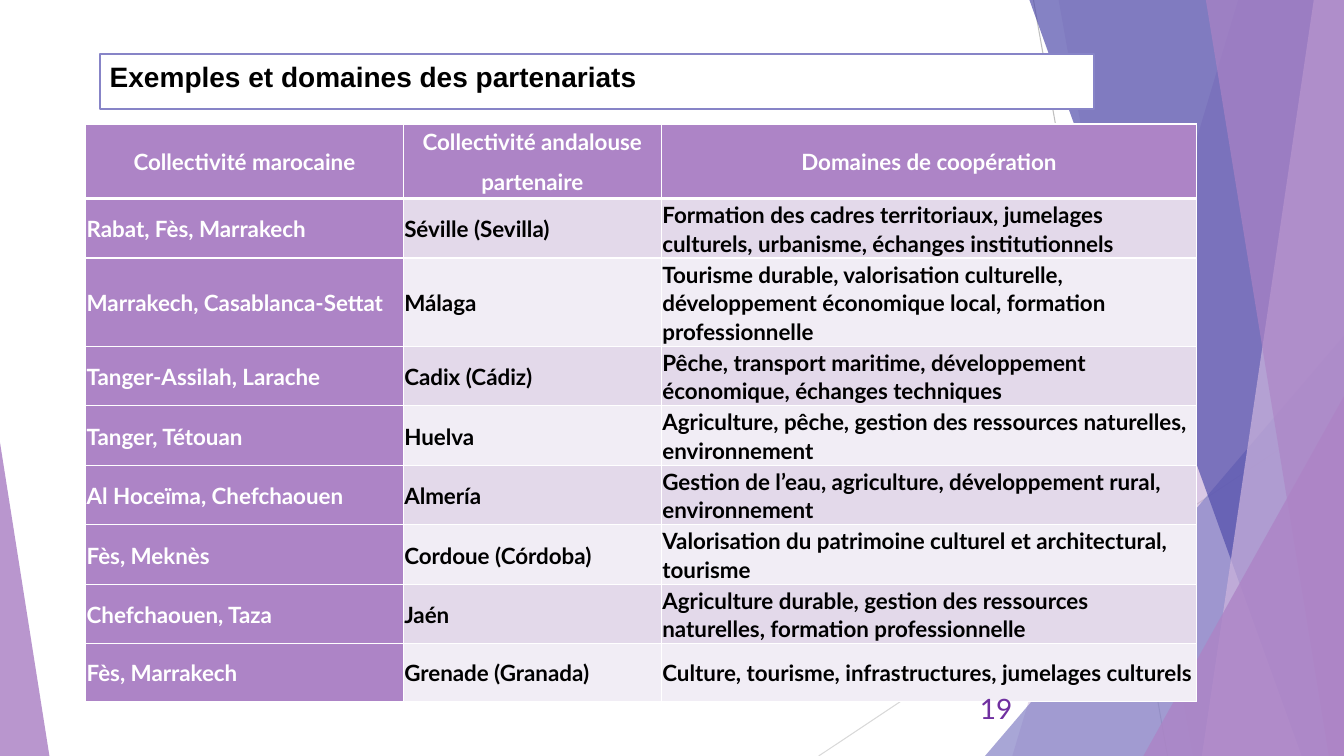
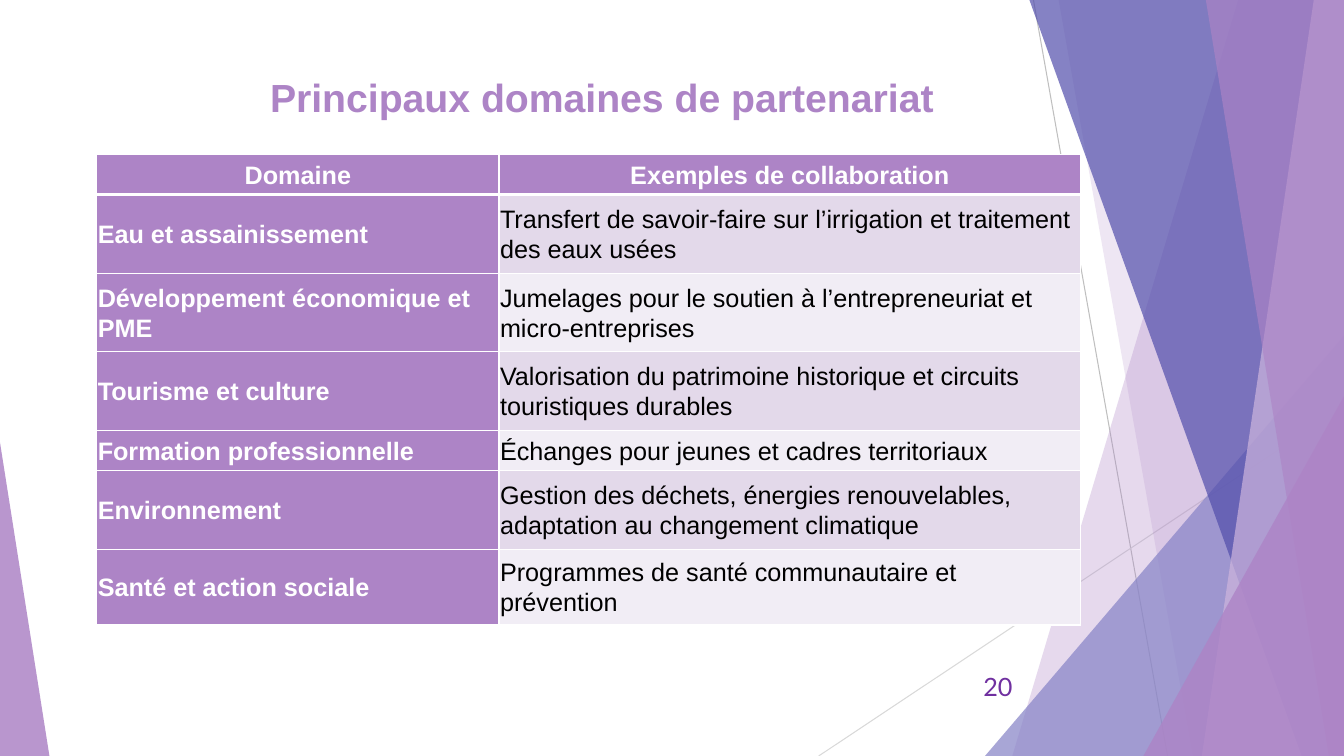
import pptx
import pptx.util
import pptx.dml.color
import pptx.enum.shapes
import pptx.enum.text
import pptx.oxml.ns
import lxml.etree

TOWNS = [
    ("Collectivité marocaine", "Collectivité andalouse\npartenaire", "Domaines de coopération"),
    ("Rabat, Fès, Marrakech", "Séville (Sevilla)",
     "Formation des cadres territoriaux, jumelages culturels, urbanisme, échanges institutionnels"),
    ("Marrakech, Casablanca-Settat", "Málaga",
     "Tourisme durable, valorisation culturelle, développement économique local, formation professionnelle"),
    ("Tanger-Assilah, Larache", "Cadix (Cádiz)",
     "Pêche, transport maritime, développement économique, échanges techniques"),
    ("Tanger, Tétouan", "Huelva",
     "Agriculture, pêche, gestion des ressources naturelles, environnement"),
    ("Al Hoceïma, Chefchaouen", "Almería",
     "Gestion de l’eau, agriculture, développement rural, environnement"),
    ("Fès, Meknès", "Cordoue (Córdoba)",
     "Valorisation du patrimoine culturel et architectural, tourisme"),
    ("Chefchaouen, Taza", "Jaén",
     "Agriculture durable, gestion des ressources naturelles, formation professionnelle"),
    ("Fès, Marrakech", "Grenade (Granada)",
     "Culture, tourisme, infrastructures, jumelages culturels"),
]
FIELDS = [
    ("Domaine", "Exemples de collaboration"),
    ("Eau et assainissement",
     "Transfert de savoir-faire sur l’irrigation et traitement des eaux usées"),
    ("Développement économique et PME",
     "Jumelages pour le soutien à l’entrepreneuriat et micro-entreprises"),
    ("Tourisme et culture",
     "Valorisation du patrimoine historique et circuits touristiques durables"),
    ("Formation professionnelle", "Échanges pour jeunes et cadres territoriaux"),
    ("Environnement",
     "Gestion des déchets, énergies renouvelables, adaptation au changement climatique"),
    ("Santé et action sociale", "Programmes de santé communautaire et prévention"),
]

THEME = {
    "white": "FFFFFF", "black": "000000", "mauve": "AD84C6", "blue": "8784C7",
    "deep": "524EAB", "pale": "CEB5DD", "odd": "E3D9EA", "even": "F1EDF5",
    "page": "7030A0", "grey": "BFBFBF", "light": "D9D9D9",
    "head": "Arial", "body": "Lato",
    "thin": 0.75, "frame": 1.5, "rule": 1, "bar": 3,
}

PAGES = [
    {"title": ("Exemples et domaines des partenariats", (99, 54, 986, 54), 20, "black"),
     "framed": True, "rows": TOWNS, "at": (85, 123), "wide": (315, 256, 531),
     "high": (74, 57, 86, 57, 57, 57, 57, 57, 57),
     "font": {"name": THEME["body"], "size": pptx.util.Pt(16)}, "strong": True,
     "page": ("19", (939, 682, 75, 42), 20)},
    {"title": ("Principaux domaines de partenariat", (258, 68, 980, 78), 28, "mauve"),
     "framed": False, "rows": FIELDS, "at": (96, 153), "wide": (399, 577),
     "high": (40, 78, 78, 78, 40, 78, 75),
     "font": {"name": THEME["head"], "size": pptx.util.Pt(18)}, "strong": False,
     "page": ("20", (939, 661, 75, 40), 18)},
]

WIDE, HIGH = 1333, 750
LINES = [((1025, 0, 1158, HIGH), "grey"), ((WIDE, 403, 812, HIGH), "light")]
DECOR = [
    ("pane", (1228, 1004), "mauve", 30),
    ("pane", (1050, 1183), "mauve", 20),
    ("wedge", (977, 333, 356, 417, 1), "blue", 72),
    ("pane", (1021, 1291), "deep", 70),
    ("pane", (1303, 1192), "pale", 70),
    ("pane", (1196, 1318), "mauve", 65),
    ("wedge", (1134, 393, 199, 357, 1), "mauve", 80),
    ("wedge", (0, 439, 49, 311, 0), "mauve", 85),
]

SCALE = 9144
ALIGN = pptx.enum.text.PP_ALIGN
MID = pptx.enum.text.MSO_ANCHOR.MIDDLE
TOP = pptx.enum.text.MSO_ANCHOR.TOP
FORMS = pptx.enum.shapes.MSO_SHAPE


def px(*nums):
    return [pptx.util.Emu(num * SCALE) for num in nums]


def tint(name):
    return pptx.dml.color.RGBColor.from_string(THEME[name])


def put(item, form):
    for key, val in form.items():
        setattr(item, key, val)


def sub(node, tag, **kw):
    return lxml.etree.SubElement(node, pptx.oxml.ns.qn(tag), **kw)


def paint(item, name):
    item.fill.solid()
    item.fill.fore_color.rgb = tint(name)


def write(frame, text, para, font, name):
    frame.text = text
    for line in frame.paragraphs:
        put(line, para)
        put(line.font, font)
        line.font.color.rgb = tint(name)


def label(slide, text, box, anchor, para, font, name):
    shape = slide.shapes.add_textbox(*px(*box))
    put(shape.text_frame, {"word_wrap": True, "vertical_anchor": anchor})
    write(shape.text_frame, text, para, font, name)
    return shape


def decor(slide):
    for ends, name in LINES:
        line = slide.shapes.add_connector(pptx.enum.shapes.MSO_CONNECTOR.STRAIGHT, *px(*ends))
        line.line.color.rgb = tint(name)
        line.line.width = pptx.util.Pt(THEME["thin"])
        sub(line.element.spPr, "a:effectLst")
    for kind, spot, name, alpha in DECOR:
        if kind == "pane":
            top, base = spot
            pen = slide.shapes.build_freeform(top, 0, scale=SCALE)
            pen.add_line_segments([(WIDE, 0), (WIDE, HIGH), (base, HIGH)], close=True)
            shape = pen.convert_to_shape()
        else:
            shape = slide.shapes.add_shape(FORMS.ISOSCELES_TRIANGLE, *px(*spot[:4]))
            shape.adjustments[0] = spot[4]
        shape.shadow.inherit = False
        paint(shape, name)
        shape.line.fill.background()
        fill = shape.element.spPr.find(pptx.oxml.ns.qn("a:solidFill"))
        sub(fill[0], "a:alpha", val=str(alpha * 1000))


def edge(cell, head):
    node = cell._tc.get_or_add_tcPr()
    for rank, side in enumerate("LRTB"):
        size = THEME["bar"] if head and side == "B" else THEME["rule"]
        line = sub(node, "a:ln" + side, w=str(pptx.util.Pt(size)))
        sub(sub(line, "a:solidFill"), "a:srgbClr", val=THEME["white"])
        node.insert(rank, line)


def grid(slide, page):
    rows, wide, high = page["rows"], page["wide"], page["high"]
    box = px(*page["at"], sum(wide), sum(high))
    table = slide.shapes.add_table(len(rows), len(wide), *box).table
    for col, size in zip(table.columns, px(*wide)):
        col.width = size
    for row, size in zip(table.rows, px(*high)):
        row.height = size
    pad = px(1)[0]
    sides = ("margin_left", "margin_right", "margin_top", "margin_bottom")
    for r, row in enumerate(rows):
        for c, text in enumerate(row):
            cell = table.cell(r, c)
            put(cell, {"vertical_anchor": MID, **dict.fromkeys(sides, pad)})
            mark = r == 0 or c == 0
            paint(cell, "mauve" if mark else "odd" if r % 2 else "even")
            edge(cell, r == 0)
            para = {"alignment": ALIGN.LEFT if r else ALIGN.CENTER,
                    "line_spacing": 1.07, "space_after": pptx.util.Pt(8)}
            font = {**page["font"], "bold": mark or page["strong"]}
            write(cell.text_frame, text, para, font, "white" if mark else "black")


def build(deck, page):
    slide = deck.slides.add_slide(deck.slide_layouts[6])
    decor(slide)
    text, box, size, name = page["title"]
    font = {"name": THEME["head"], "size": pptx.util.Pt(size), "bold": True}
    title = label(slide, text, box, TOP, {"alignment": ALIGN.LEFT}, font, name)
    if page["framed"]:
        paint(title, "white")
        title.line.color.rgb = tint("blue")
        title.line.width = pptx.util.Pt(THEME["frame"])
    grid(slide, page)
    text, box, size = page["page"]
    font = {"name": THEME["body"], "size": pptx.util.Pt(size)}
    label(slide, text, box, MID, {"alignment": ALIGN.RIGHT}, font, "page")


def main():
    deck = pptx.Presentation()
    deck.slide_width, deck.slide_height = px(WIDE, HIGH)
    for page in PAGES:
        build(deck, page)
    deck.save("out.pptx")


if __name__ == "__main__":
    main()
